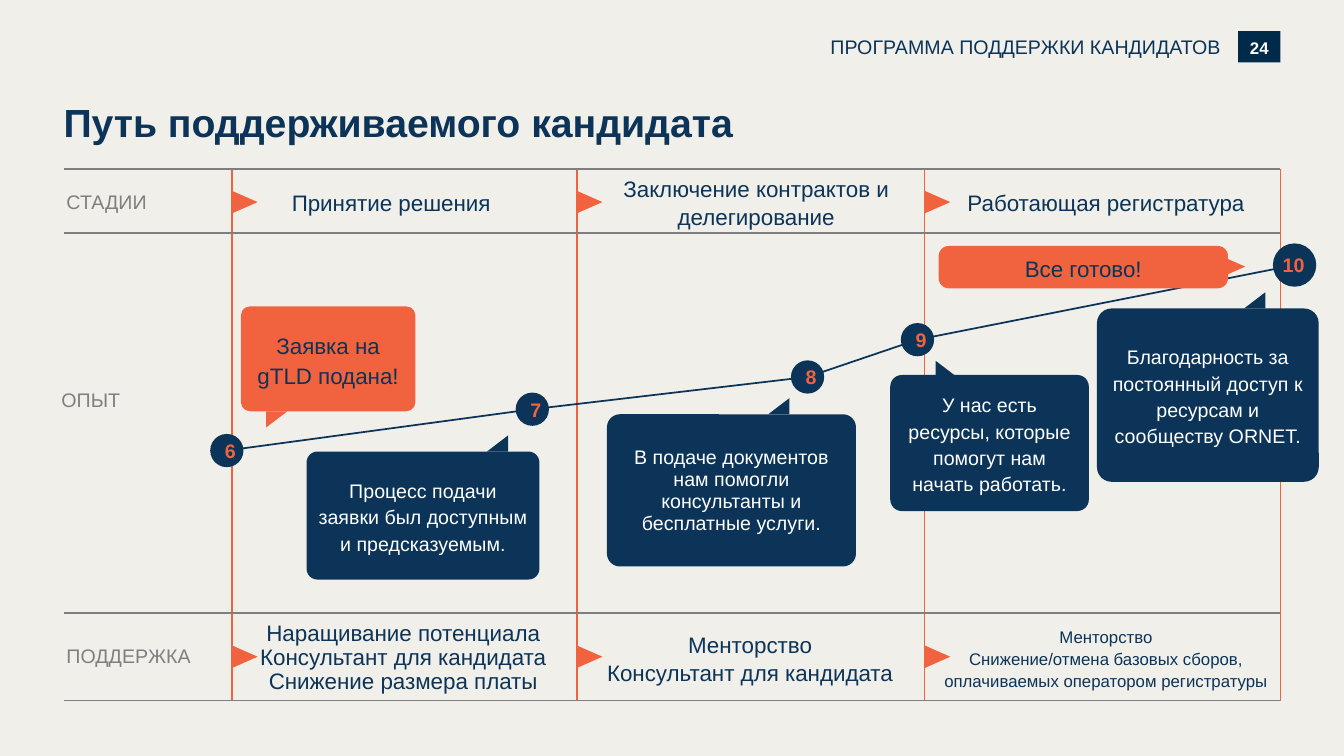
"""Build the slide that shows the supported applicant's journey."""
from lxml import etree
from pptx import Presentation
from pptx import util as u
from pptx.dml.color import RGBColor
from pptx.enum import shapes, text
from pptx.oxml.ns import qn

PAPER = RGBColor(0xF1, 0xEF, 0xEA)
NAVY = RGBColor(0x0B, 0x34, 0x58)
BADGE = RGBColor(0x00, 0x2A, 0x49)
ORANGE = RGBColor(0xF1, 0x63, 0x3E)
GREY = RGBColor(0x7F, 0x7F, 0x7F)
WHITE = RGBColor(0xFF, 0xFF, 0xFF)
FONT = "Arial"
SHAPE = shapes.MSO_SHAPE
ALIGN = text.PP_ALIGN
ANCHOR = text.MSO_ANCHOR

TITLE = "Путь поддерживаемого кандидата"
PROGRAMME = "ПРОГРАММА ПОДДЕРЖКИ КАНДИДАТОВ"
PAGE_NUMBER = "24"

COLUMNS = (2.3, 5.72, 9.17, 12.7)
ROWS = (1.68, 2.31, 6.08, 6.95)
GRID_LEFT = 0.63
ARROW_ROWS = (1.88, 6.39)

ROW_LABELS = [("СТАДИИ", 0.66, 1.88), ("ОПЫТ", 0.61, 3.85), ("ПОДДЕРЖКА", 0.66, 6.39)]

STAGES = [
    ("Принятие решения", 2.27),
    ("Заключение контрактов и делегирование", 5.89),
    ("Работающая регистратура", 9.36),
]

SUPPORT = [
    (["Наращивание потенциала", "Консультант для кандидата Снижение размера платы"],
     2.22, 16, u.Pt(17.2), (0.12, 0, 0, 0)),
    (["Менторство", "Консультант для кандидата"],
     5.72, 16, 1.06, (0.1, 0.05, 0.1, 0.05)),
    (["Менторство", "Снижение/отмена базовых сборов, оплачиваемых оператором регистратуры"],
     9.25, 12, u.Pt(16), (0.1, 0.05, 0.1, 0.05)),
]

MILESTONES = [
    ("6", 2.25, 4.47, 0.33),
    ("7", 5.28, 4.06, 0.33),
    ("8", 8.01, 3.74, 0.33),
    ("9", 9.1, 3.37, 0.33),
    ("10", 12.84, 2.63, 0.43),
]

CARDS = [
    ("Заявка на gTLD подана!", (2.39, 3.04, 1.73, 1.04), ORANGE, NAVY, 16, 1.12, 0.085),
    ("Процесс подачи заявки был доступным и предсказуемым.",
     (3.04, 4.48, 2.31, 1.27), NAVY, WHITE, 14, 1.12, 0.085),
    ("В подаче документов нам помогли консультанты и бесплатные услуги.",
     (6.02, 4.11, 2.47, 1.51), NAVY, WHITE, 14, u.Pt(15.8), 0.085),
    ("У нас есть ресурсы, которые помогут нам начать работать.",
     (8.83, 3.72, 1.97, 1.35), NAVY, WHITE, 14, 1.12, 0.085),
    ("Благодарность за постоянный доступ к ресурсам и сообществу ORNET.",
     (10.88, 3.06, 2.2, 1.72), NAVY, WHITE, 14, 1.12, 0.085),
    ("Все готово!", (9.31, 2.44, 2.87, 0.42), ORANGE, NAVY, 16, 1.12, 0.239),
]

TAILS = [
    (2.64, 4.08, ORANGE, 180, True),
    (4.83, 4.32, NAVY, 0, True),
    (7.62, 3.95, NAVY, 0, True),
    (9.28, 3.58, NAVY, 0, False),
    (12.34, 2.9, NAVY, 0, True),
]


def write(box, lines, size, color, align=ALIGN.CENTER, bold=False, spacing=None,
          insets=(0, 0, 0, 0), anchor=ANCHOR.MIDDLE):
    frame = box.text_frame
    frame.word_wrap = True
    frame.auto_size = text.MSO_AUTO_SIZE.NONE
    frame.vertical_anchor = anchor
    frame.margin_left, frame.margin_top, frame.margin_right, frame.margin_bottom = map(u.Inches, insets)
    for index, line in enumerate(lines):
        para = frame.add_paragraph() if index else frame.paragraphs[0]
        para.alignment = align
        if spacing is not None:
            para.line_spacing = spacing
        span = para.add_run()
        span.text = line
        span.font.name = FONT
        span.font.size = u.Pt(size)
        span.font.bold = bold
        span.font.color.rgb = color


def add_label(page, frame, lines, size, color, **options):
    box = page.shapes.add_textbox(*map(u.Inches, frame))
    write(box, lines, size, color, **options)


def add_solid(page, kind, frame, color, rotation=0):
    shape = page.shapes.add_shape(kind, *map(u.Inches, frame))
    shape.shadow.inherit = False
    shape.fill.solid()
    shape.fill.fore_color.rgb = color
    shape.line.fill.background()
    shape.rotation = rotation
    return shape


def add_line(page, start, end, color):
    line = page.shapes.add_connector(shapes.MSO_CONNECTOR.STRAIGHT, *map(u.Inches, start + end))
    line.line.color.rgb = color
    line.line.width = u.Pt(1.25)
    etree.SubElement(line._element.spPr, qn("a:effectLst"))


def add_header(page):
    badge = add_solid(page, SHAPE.RECTANGLE, (12.28, 0.31, 0.42, 0.31), BADGE)
    write(badge, [PAGE_NUMBER], 12, WHITE, bold=True, spacing=1.08)
    add_label(page, (7.28, 0.35, 4.83, 0.24), [PROGRAMME], 14, NAVY,
              align=ALIGN.RIGHT, anchor=ANCHOR.TOP)
    title = page.shapes.title
    title.left, title.top, title.width, title.height = map(u.Inches, (0.63, 0.98, 8.51, 0.58))
    write(title, [TITLE], 28, NAVY, align=ALIGN.LEFT, bold=True, anchor=ANCHOR.TOP)


def add_grid(page):
    for x in COLUMNS:
        add_line(page, (x, ROWS[0]), (x, ROWS[-1]), ORANGE)
    for y in ROWS:
        add_line(page, (GRID_LEFT, y), (COLUMNS[-1], y), GREY)
    for x in COLUMNS[:-1]:
        for y in ARROW_ROWS:
            add_solid(page, SHAPE.ISOSCELES_TRIANGLE, (x + 0.02, y, 0.22, 0.25), ORANGE, 90)
    for label, x, y in ROW_LABELS:
        add_label(page, (x, y, 1.64, 0.24), [label], 14, GREY,
                  align=ALIGN.LEFT, anchor=ANCHOR.TOP)
    for stage, x in STAGES:
        add_label(page, (x, 1.77, 3.22, 0.46), [stage], 16, NAVY, spacing=1.06)
    for lines, x, size, spacing, insets in SUPPORT:
        add_label(page, (x, 6.14, 3.44, 0.77), lines, size, NAVY, spacing=spacing, insets=insets)


def add_journey(page):
    for (_, x1, y1, _), (_, x2, y2, _) in zip(MILESTONES, MILESTONES[1:]):
        add_line(page, (x1, y1), (x2, y2), NAVY)
    for number, x, y, size in MILESTONES:
        dot = add_solid(page, SHAPE.OVAL, (x - size / 2, y - size / 2, size, size), NAVY)
        insets = (0, 0, 0.02, 0) if len(number) > 1 else (0.1, 0.05, 0.1, 0.05)
        write(dot, [number], 14, ORANGE, bold=True, insets=insets)
    for words, frame, fill, color, size, spacing, radius in CARDS:
        card = add_solid(page, SHAPE.ROUNDED_RECTANGLE, frame, fill)
        card.adjustments[0] = radius
        write(card, [words], size, color, spacing=spacing, insets=(0.08, 0.04, 0.08, 0.04))
    for x, y, color, rotation, flipped in TAILS:
        tail = add_solid(page, SHAPE.RIGHT_TRIANGLE, (x, y, 0.21, 0.16), color, rotation)
        if flipped:
            tail._element.spPr.find(qn("a:xfrm")).set("flipH", "1")
    add_solid(page, SHAPE.ISOSCELES_TRIANGLE, (12.19, 2.56, 0.15, 0.17), ORANGE, 90)


def main():
    deck = Presentation()
    deck.slide_width, deck.slide_height = u.Inches(13.33), u.Inches(7.5)
    page = deck.slides.add_slide(deck.slide_layouts[5])
    page.background.fill.solid()
    page.background.fill.fore_color.rgb = PAPER
    add_header(page)
    add_grid(page)
    add_journey(page)
    deck.save("out.pptx")


if __name__ == "__main__":
    main()
